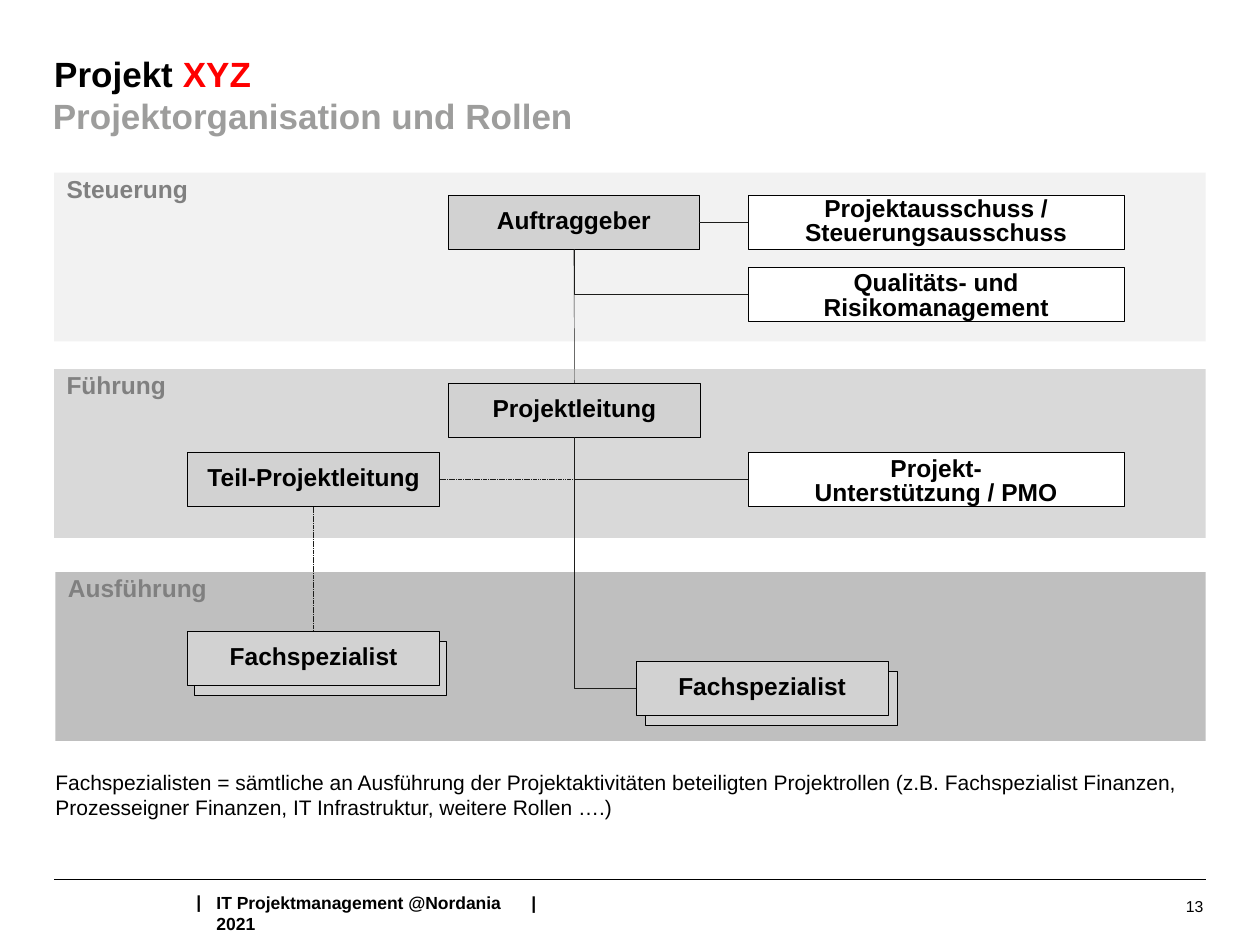
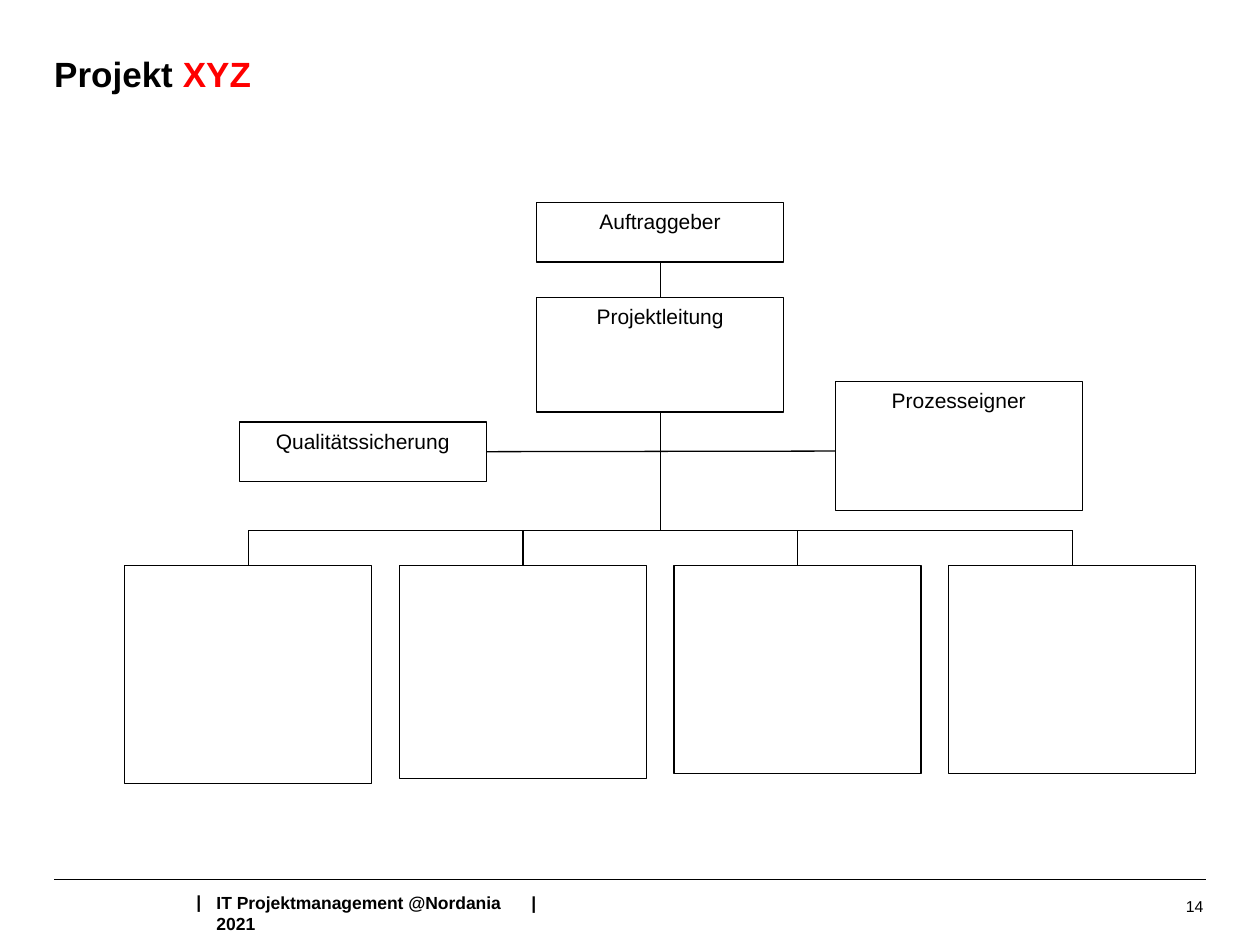
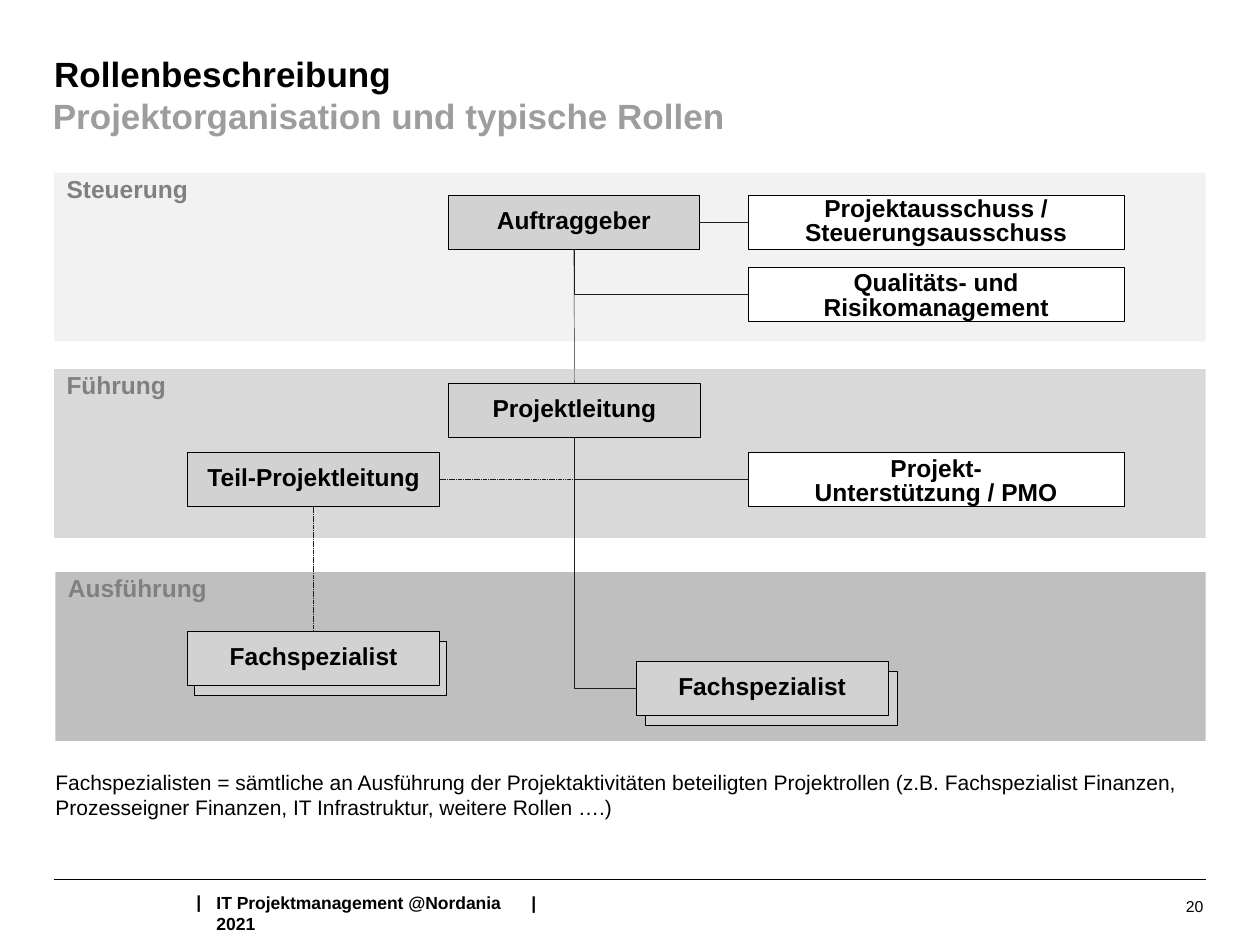
import dataclasses
from typing import Optional

import lxml.etree
import pptx
import pptx.dml.color
import pptx.enum.dml
import pptx.enum.shapes
import pptx.enum.text
import pptx.oxml.ns
import pptx.shapes.autoshape
import pptx.shapes.connector
import pptx.slide
import pptx.text.text
import pptx.util

Inches = pptx.util.Inches
Anchor = pptx.enum.text.MSO_ANCHOR
Align = pptx.enum.text.PP_ALIGN
Connector = pptx.enum.shapes.MSO_CONNECTOR
Shape = pptx.shapes.autoshape.Shape
Slide = pptx.slide.Slide

FONT = "Arial"
BLACK, WHITE, RED = "000000", "FFFFFF", "FF0000"
ROLE_GREY, BAND_LABEL, SUBTITLE_GREY, LINK = "D2D2D2", "808080", "9D9D9C", "1D1D1B"
TOP, LEFT, BOTTOM, RIGHT = range(4)
NO_INSETS = (0, 0, 0, 0)
DEFAULT_INSETS = (0.1, 0.05, 0.1, 0.05)
TITLE_INSETS = (0, 0.05, 0.1, 0.05)


@dataclasses.dataclass(frozen=True)
class TextStyle:
    size: float
    bold: bool = False
    color: str = BLACK
    align: Align = Align.LEFT
    anchor: Anchor = Anchor.TOP
    insets: tuple[float, float, float, float] = DEFAULT_INSETS
    line_points: Optional[float] = None
    wrap: bool = True


TITLE = TextStyle(20, True, insets=TITLE_INSETS)
SUBTITLE = dataclasses.replace(TITLE, color=SUBTITLE_GREY)
FOOTER = TextStyle(10, True)
PAGE_NUMBER = TextStyle(9, align=Align.RIGHT, anchor=Anchor.MIDDLE)
BAND = TextStyle(14, True, BAND_LABEL, line_points=14)
ROLE = TextStyle(14, True, BLACK, Align.CENTER, Anchor.MIDDLE, NO_INSETS, 14)
ROLE_LOW = dataclasses.replace(ROLE, anchor=Anchor.BOTTOM)
NOTE = TextStyle(12, insets=NO_INSETS)
CHART = TextStyle(12, align=Align.CENTER, wrap=False)


@dataclasses.dataclass(frozen=True)
class Box:
    left: float
    top: float
    width: float
    height: float
    text: str = ""
    fill: str = WHITE
    style: TextStyle = ROLE
    line_width: float = 0.25
    stack_offset: float = 0  # sideways shift of a second box behind, 0 for none


@dataclasses.dataclass(frozen=True)
class Link:
    start: str
    start_side: int
    end: str
    end_side: int
    elbow: bool = False
    dashed: bool = False


BANDS = [
    Box(0.43, 1.37, 9.14, 1.34, "Steuerung", "F2F2F2", BAND, 0),
    Box(0.43, 2.93, 9.14, 1.34, "Führung", "D9D9D9", BAND, 0),
    Box(0.44, 4.54, 9.13, 1.34, "Ausführung", "BFBFBF", BAND, 0),
]

ROLES = {
    "sponsor": Box(3.56, 1.55, 1.99, 0.43, "Auftraggeber", ROLE_GREY),
    "committee": Box(5.94, 1.55, 2.98, 0.43, "Projektausschuss / Steuerungsausschuss"),
    "quality": Box(5.94, 2.12, 2.98, 0.43, "Qualitäts- und\nRisikomanagement", style=ROLE_LOW),
    "lead": Box(3.56, 3.04, 2, 0.43, "Projektleitung", ROLE_GREY),
    "sublead": Box(1.49, 3.59, 2, 0.43, "Teil-Projektleitung", ROLE_GREY),
    "support": Box(5.94, 3.59, 2.98, 0.43, "Projekt-\nUnterstützung / PMO", style=ROLE_LOW),
    "left expert": Box(1.49, 5.01, 2, 0.43, "Fachspezialist", ROLE_GREY, stack_offset=0.05),
    "right expert": Box(5.05, 5.25, 2, 0.43, "Fachspezialist", ROLE_GREY, stack_offset=0.07),
}

# An elbow leaves its first box sideways and meets the second from below.
ROLE_LINKS = [
    Link("sponsor", RIGHT, "committee", LEFT),
    Link("sponsor", BOTTOM, "lead", TOP),
    Link("quality", LEFT, "sponsor", BOTTOM, elbow=True),
    Link("support", LEFT, "lead", BOTTOM, elbow=True),
    Link("right expert", LEFT, "lead", BOTTOM, elbow=True),
    Link("sublead", RIGHT, "lead", BOTTOM, elbow=True, dashed=True),
    Link("left expert", TOP, "sublead", BOTTOM, dashed=True),
]

NOTE_TEXT = (
    "Fachspezialisten = sämtliche an Ausführung der Projektaktivitäten beteiligten "
    "Projektrollen (z.B. Fachspezialist Finanzen, Prozesseigner Finanzen, "
    "IT Infrastruktur, weitere Rollen ….)"
)


def rgb(color: str) -> pptx.dml.color.RGBColor:
    return pptx.dml.color.RGBColor.from_string(color)


def write(frame: pptx.text.text.TextFrame, text: str, style: TextStyle) -> None:
    frame.text = text
    frame.word_wrap = style.wrap
    frame.auto_size = pptx.enum.text.MSO_AUTO_SIZE.NONE
    frame.vertical_anchor = style.anchor
    (frame.margin_left, frame.margin_top,
     frame.margin_right, frame.margin_bottom) = map(Inches, style.insets)
    for para in frame.paragraphs:
        para.alignment = style.align
        para.space_before = pptx.util.Pt(0)
        if style.line_points:
            para.line_spacing = pptx.util.Pt(style.line_points)
        para.font.name = FONT
        para.font.size = pptx.util.Pt(style.size)
        para.font.bold = style.bold
        para.font.color.rgb = rgb(style.color)


def add_text(page: Slide, left: float, top: float, width: float, height: float,
             text: str, style: TextStyle) -> Shape:
    box = page.shapes.add_textbox(*map(Inches, (left, top, width, height)))
    write(box.text_frame, text, style)
    return box


def add_box(page: Slide, box: Box) -> Shape:
    if box.stack_offset:
        add_box(page, dataclasses.replace(
            box, left=box.left + box.stack_offset, top=box.top + 0.08,
            text="", stack_offset=0))
    shape = page.shapes.add_shape(
        pptx.enum.shapes.MSO_SHAPE.RECTANGLE,
        *map(Inches, (box.left, box.top, box.width, box.height)))
    shape.shadow.inherit = False
    shape.fill.solid()
    shape.fill.fore_color.rgb = rgb(box.fill)
    if box.line_width:
        shape.line.color.rgb = rgb(BLACK)
        shape.line.width = pptx.util.Pt(box.line_width)
    else:
        shape.line.fill.background()
    if box.text:
        write(shape.text_frame, box.text, box.style)
    return shape


def add_line(page: Slide, start: tuple[float, float] = (0, 0),
             end: tuple[float, float] = (0, 0), color: str = BLACK, width: float = 0.75,
             kind: Connector = Connector.STRAIGHT) -> pptx.shapes.connector.Connector:
    line = page.shapes.add_connector(kind, *map(Inches, (*start, *end)))
    line.line.color.rgb = rgb(color)
    line.line.width = pptx.util.Pt(width)
    lxml.etree.SubElement(line._element.spPr, pptx.oxml.ns.qn("a:effectLst"))
    return line


def add_link(page: Slide, link: Link, shapes: dict[str, Shape]) -> None:
    kind = Connector.ELBOW if link.elbow else Connector.STRAIGHT
    line = add_line(page, color=LINK, width=0.25, kind=kind)
    line.begin_connect(shapes[link.start], link.start_side)
    line.end_connect(shapes[link.end], link.end_side)
    if link.elbow:
        line._element.spPr.prstGeom.set("prst", "bentConnector2")
    if link.dashed:
        line.line.dash_style = pptx.enum.dml.MSO_LINE.SQUARE_DOT


def set_tab_stops(para: pptx.text.text._Paragraph, stops: list[float]) -> None:
    tabs = lxml.etree.SubElement(
        para._p.get_or_add_pPr(), pptx.oxml.ns.qn("a:tabLst"))
    for stop in stops:
        lxml.etree.SubElement(
            tabs, pptx.oxml.ns.qn("a:tab"), pos=str(Inches(stop)), algn="l")


def add_footer(page: Slide, number: int) -> None:
    add_line(page, (0.43, 6.98), (9.57, 6.98))
    add_text(page, 1.46, 7.02, 0.24, 0.27, "|", FOOTER)
    box = page.shapes.add_textbox(*map(Inches, (1.62, 7.03, 3.23, 0.27)))
    set_tab_stops(box.text_frame.paragraphs[0], [2.3, 2.45])
    write(box.text_frame, "IT Projektmanagement @Nordania\t|\t2021", FOOTER)
    add_text(page, 7.32, 6.95, 2.33, 0.48, str(number), PAGE_NUMBER)


def add_page(deck, number: int, title: str, red_part: str = "", subtitle: str = "") -> Slide:
    page = deck.slides.add_slide(deck.slide_layouts.get_by_name("Title Only"))
    heading = page.shapes.title
    heading.left, heading.top, heading.width, heading.height = map(
        Inches, (0.43, 0.37, 9.14, 0.39))
    write(heading.text_frame, title, TITLE)
    if red_part:
        span = heading.text_frame.paragraphs[0].add_run()
        span.text = red_part
        span.font.color.rgb = rgb(RED)
    if subtitle:
        add_text(page, 0.42, 0.7, 9.14, 0.39, subtitle, SUBTITLE)
    add_footer(page, number)
    return page


def add_role_diagram(page: Slide) -> None:
    for band in BANDS:
        add_box(page, band)
    shapes = {name: add_box(page, role) for name, role in ROLES.items()}
    for link in ROLE_LINKS:
        add_link(page, link, shapes)
    add_text(page, 0.44, 6.11, 9.13, 0.4, NOTE_TEXT, NOTE)


def add_organisation_chart(page: Slide) -> None:
    width, bus_top, team_top = 1.96, 4.21, 4.49

    def chart_box(left: float, top: float, height: float, text: str = "") -> Shape:
        return add_box(page, Box(left, top, width, height, text, WHITE, CHART, 0.75))

    sponsor = chart_box(4.26, 1.61, 0.47, "Auftraggeber")
    lead = chart_box(4.26, 2.36, 0.91, "Projektleitung")
    quality = chart_box(1.9, 3.35, 0.47, "Qualitätssicherung")
    chart_box(6.63, 3.03, 1.02, "Prozesseigner")

    sponsor_to_lead = add_line(page)
    sponsor_to_lead.begin_connect(sponsor, BOTTOM)
    sponsor_to_lead.end_connect(lead, TOP)
    add_line(page, (5.24, 3.27), (5.24, bus_top)).begin_connect(lead, BOTTOM)
    add_line(page, (3.86, 3.58), (6.63, 3.58)).begin_connect(quality, RIGHT)

    team_heights = [1.73, 1.69, 1.65, 1.65]
    team_lefts = [0.99 + 2.18 * index for index in range(len(team_heights))]
    centers = [left + width / 2 for left in team_lefts]
    add_line(page, (centers[0], bus_top), (centers[-1], bus_top))
    for left, center, height in zip(team_lefts, centers, team_heights):
        team = chart_box(left, team_top, height)
        add_line(page, (center, bus_top), (center, team_top)).end_connect(team, TOP)


def main() -> None:
    deck = pptx.Presentation()
    deck.slide_width, deck.slide_height = Inches(10), Inches(7.5)
    add_role_diagram(add_page(
        deck, 13, "Projekt ", "XYZ", "Projektorganisation und Rollen"))
    add_organisation_chart(add_page(deck, 14, "Projekt ", "XYZ"))
    add_role_diagram(add_page(
        deck, 20, "Rollenbeschreibung", subtitle="Projektorganisation und typische Rollen"))
    deck.save("out.pptx")


if __name__ == "__main__":
    main()
